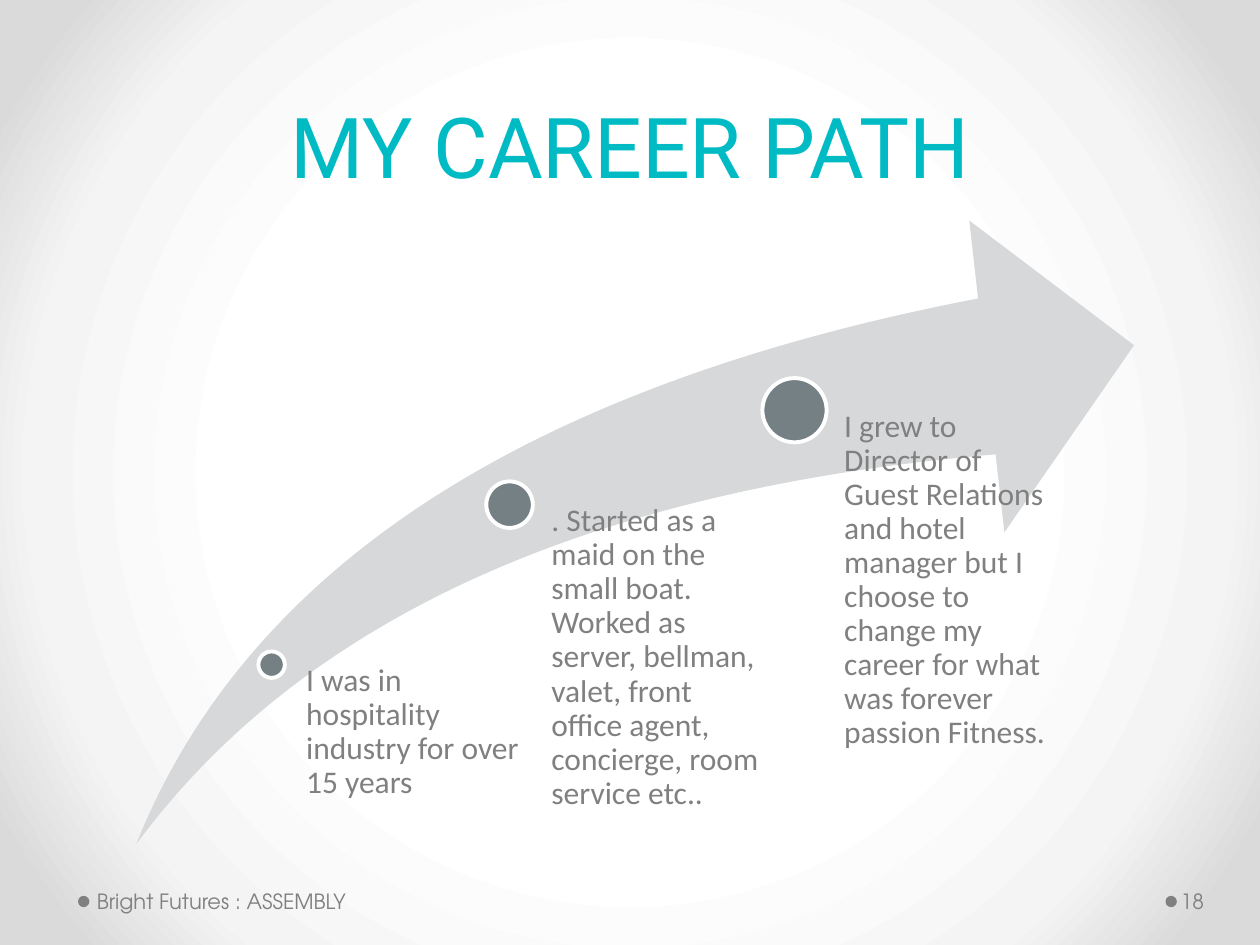
from dataclasses import dataclass

from pptx import Presentation
from pptx.dml.color import RGBColor
from pptx.enum.shapes import MSO_SHAPE as Preset
from pptx.enum.text import MSO_ANCHOR as Anchor, MSO_AUTO_SIZE as AutoSize, PP_ALIGN as Align
from pptx.oxml import parse_xml
from pptx.oxml.ns import nsdecls
from pptx.shapes.autoshape import Shape
from pptx.slide import Slide
from pptx.text.text import TextFrame
from pptx.util import Pt

GREY, SLATE, SILVER, WHITE, TEAL = "808080", "758085", "D6D8D9", "FFFFFF", "00BAC4"
ARROW_BOTTOM = 482.4
INSET_PER_DIAMETER = 0.53
BACKGROUND_STOPS = [(50, WHITE), (76, "F4F4F4"), (92, "DADADA")]


@dataclass
class Milestone:
    center_x: float
    center_y: float
    diameter: float
    text_left: float
    text_width: float
    text: str


@dataclass
class FooterItem:
    bullet_left: float
    left: float
    width: float
    inset_left: float
    inset_right: float
    text: str


MILESTONES = [
    Milestone(155.2, 379.8, 15.1, 167, 133.2, "I was in hospitality industry for over 15 years"),
    Milestone(291.2, 288.4, 26.6, 301, 136.8,
              ". Started as a maid on the small boat. Worked as server, bellman, "
              "valet, front office agent, concierge, room service etc.."),
    Milestone(454, 234.4, 36.7, 463, 136.8,
              "I grew to Director of Guest Relations and hotel manager but I choose "
              "to change my career for what was forever passion Fitness."),
]
FOOTER_ITEMS = [
    FooterItem(44.6, 51.8, 224, 3.6, 7.2, "Bright Futures : ASSEMBLY"),
    FooterItem(666, 672.5, 44, 2.2, 3.6, "18"),
]


def color(value: str) -> RGBColor:
    """Turn a hex string into a colour."""
    return RGBColor.from_string(value)


def set_background(slide: Slide) -> None:
    """Fill the background with a circular gradient."""
    stops = "".join(
        f'<a:gs pos="{percent * 1000}"><a:srgbClr val="{value}"/></a:gs>'
        for percent, value in BACKGROUND_STOPS
    )
    background = parse_xml(
        f'<p:bg {nsdecls("p", "a")}><p:bgPr><a:gradFill rotWithShape="1">'
        f'<a:gsLst>{stops}</a:gsLst><a:path path="circle">'
        '<a:fillToRect l="50000" t="50000" r="50000" b="50000"/></a:path>'
        "</a:gradFill><a:effectLst/></p:bgPr></p:bg>"
    )
    slide.element.cSld.insert(0, background)


def add_preset(slide: Slide, preset: Preset, left: float, top: float,
               width: float, height: float, fill: str) -> Shape:
    """Add a flat preset shape without an outline."""
    shape = slide.shapes.add_shape(preset, Pt(left), Pt(top), Pt(width), Pt(height))
    shape.shadow.inherit = False
    shape.fill.solid()
    shape.fill.fore_color.rgb = color(fill)
    shape.line.fill.background()
    return shape


def format_text(frame: TextFrame, text: str, font: str, size: float, fill: str) -> None:
    """Write one paragraph in the given font."""
    frame.word_wrap = True
    frame.auto_size = AutoSize.NONE
    frame.text = text
    paragraph = frame.paragraphs[0]
    paragraph.font.name = font
    paragraph.font.size = Pt(size)
    paragraph.font.color.rgb = color(fill)


def add_text(slide: Slide, left: float, top: float, width: float, height: float,
             insets: tuple[float, float, float, float], text: str,
             font: str, size: float) -> TextFrame:
    """Add a grey text box with left, top, right and bottom insets."""
    box = slide.shapes.add_textbox(Pt(left), Pt(top), Pt(width), Pt(height))
    frame = box.text_frame
    (frame.margin_left, frame.margin_top,
     frame.margin_right, frame.margin_bottom) = map(Pt, insets)
    format_text(frame, text, font, size, GREY)
    return frame


def add_title(slide: Slide, text: str) -> None:
    """Place and format the title."""
    title = slide.shapes.title
    title.left, title.top, title.width, title.height = map(Pt, (36, 10.8, 648, 104.4))
    format_text(title.text_frame, text, "Roboto", 48, TEAL)
    title.text_frame.vertical_anchor = Anchor.BOTTOM
    paragraph = title.text_frame.paragraphs[0]
    paragraph.alignment = Align.CENTER
    paragraph.line_spacing = Pt(58)


def add_milestone(slide: Slide, milestone: Milestone) -> None:
    """Draw a dot on the arrow with its text hanging from the dot's centre."""
    diameter = milestone.diameter
    dot = add_preset(slide, Preset.OVAL, milestone.center_x - diameter / 2,
                     milestone.center_y - diameter / 2, diameter, diameter, SLATE)
    dot.line.color.rgb = color(WHITE)
    dot.line.width = Pt(2.25)
    frame = add_text(slide, milestone.text_left, milestone.center_y, milestone.text_width,
                     ARROW_BOTTOM - milestone.center_y,
                     (diameter * INSET_PER_DIAMETER, 0, 0, 0), milestone.text, "Calibri", 18)
    frame.paragraphs[0].line_spacing = 0.9


def add_footer_item(slide: Slide, item: FooterItem) -> None:
    """Draw a footer text with the round bullet before it."""
    add_preset(slide, Preset.OVAL, item.bullet_left, 511.9, 6.5, 6.5, GREY)
    frame = add_text(slide, item.left, 500.4, item.width, 28.8,
                     (item.inset_left, 3.6, item.inset_right, 3.6),
                     item.text, "TeX Gyre Adventor", 12)
    frame.vertical_anchor = Anchor.MIDDLE


def main() -> None:
    """Build and save the career path slide."""
    presentation = Presentation()
    presentation.slide_width, presentation.slide_height = Pt(720), Pt(540)
    slide = presentation.slides.add_slide(presentation.slide_layouts[5])
    set_background(slide)
    add_title(slide, "MY CAREER PATH")
    arrow = add_preset(slide, Preset.SWOOSH_ARROW, 77.8, 126, 570.2, ARROW_BOTTOM - 126, SILVER)
    arrow.adjustments[0] = arrow.adjustments[1] = 0.25
    for milestone in MILESTONES:
        add_milestone(slide, milestone)
    for item in FOOTER_ITEMS:
        add_footer_item(slide, item)
    presentation.save("out.pptx")


if __name__ == "__main__":
    main()
